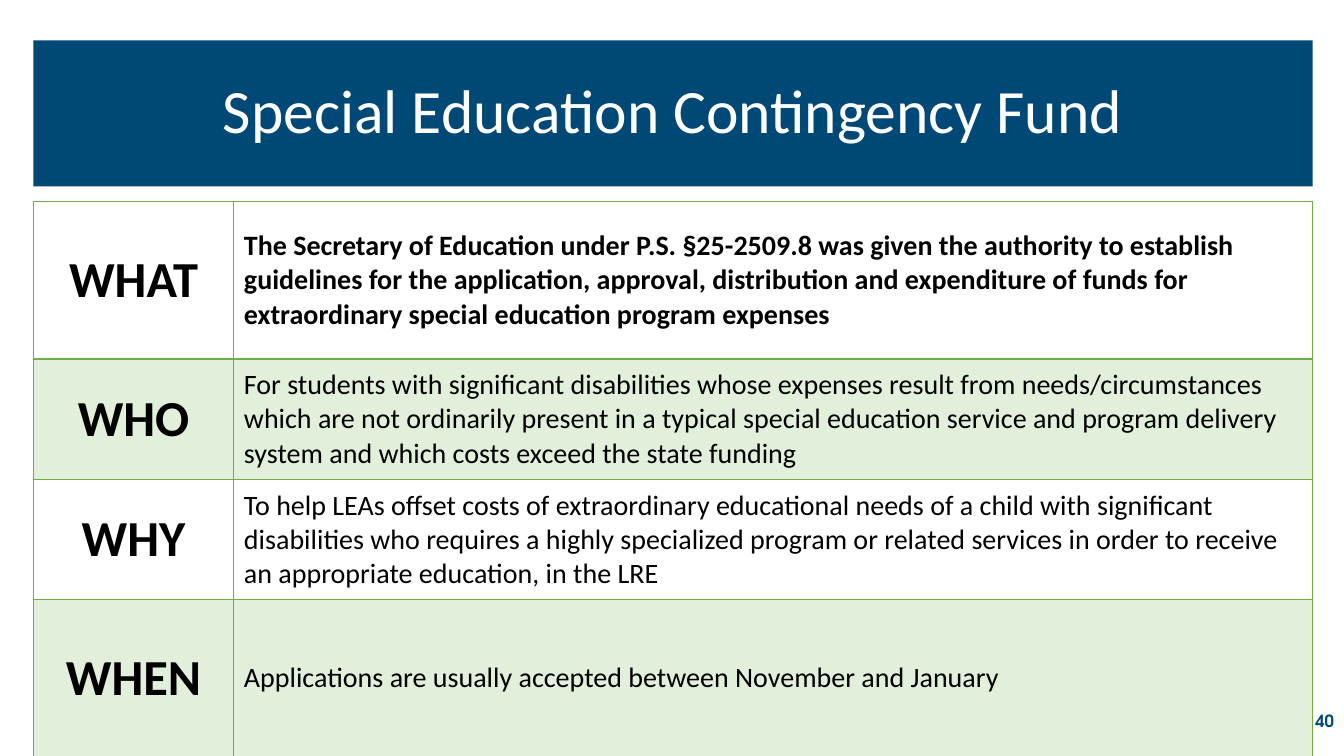
import pptx
import pptx.util
import pptx.dml.color
import pptx.enum.shapes
import pptx.enum.text
from lxml import etree

Inches, Pt = pptx.util.Inches, pptx.util.Pt
ALIGN = pptx.enum.text.PP_ALIGN
MIDDLE = pptx.enum.text.MSO_ANCHOR.MIDDLE

NAVY, GREEN, PALE_GREEN = "004976", "70AD47", "E2EFDA"
WHITE, BLACK = "FFFFFF", "000000"

TITLE = "Special Education Contingency Fund"
PAGE = "40"
# label, explanation, row height
ROWS = [
    ("WHAT", "The Secretary of Education under P.S. §25-2509.8 was given the authority to "
     "establish guidelines for the application, approval, distribution and expenditure of "
     "funds for extraordinary special education program expenses", 1.56),
    ("WHO", "For students with significant disabilities whose expenses result from "
     "needs/circumstances which are not ordinarily present in a typical special education "
     "service and program delivery system and which costs exceed the state funding", 1.2),
    ("WHY", "To help LEAs offset costs of extraordinary educational needs of a child with "
     "significant disabilities who requires a highly specialized program or related services "
     "in order to receive an appropriate education, in the LRE", 1.19),
    ("WHEN", "Applications are usually accepted between November and January", 1.56),
]
COLUMNS = (1.99, 10.7)
LEFT, WIDTH = 0.33, sum(COLUMNS)


def rgb(color):
    return pptx.dml.color.RGBColor.from_string(color)


def write(tf, text, size, color, align, bold=False, font="Calibri"):
    tf.word_wrap = True
    tf.text = text
    p = tf.paragraphs[0]
    p.alignment = align
    f = p.runs[0].font
    f.name, f.size, f.bold = font, Pt(size), bold
    f.color.rgb = rgb(color)
    return p


def add_borders(cell, bottom, top):
    """Draw the four cell edges; bottom and top are widths in points."""
    ns = "{http://schemas.openxmlformats.org/drawingml/2006/main}"
    tcPr = cell._tc.get_or_add_tcPr()
    for side, width in (("L", 1), ("R", 1), ("T", top), ("B", bottom)):
        ln = etree.SubElement(tcPr, f"{ns}ln{side}", w=str(Pt(width)))
        fill = etree.SubElement(ln, f"{ns}solidFill")
        etree.SubElement(fill, f"{ns}srgbClr", val=GREEN)


prs = pptx.Presentation()
prs.slide_width, prs.slide_height = Inches(13.33), Inches(7.5)
s = prs.slides.add_slide(prs.slide_layouts[6])

banner = s.shapes.add_shape(pptx.enum.shapes.MSO_SHAPE.RECTANGLE,
                            Inches(LEFT), Inches(0.4), Inches(WIDTH), Inches(1.45))
banner.shadow.inherit = False
banner.fill.solid()
banner.fill.fore_color.rgb = rgb(NAVY)
banner.line.fill.background()
banner.text_frame.vertical_anchor = MIDDLE
write(banner.text_frame, TITLE, 44, WHITE, ALIGN.CENTER).line_spacing = 0.9

table = s.shapes.add_table(len(ROWS), len(COLUMNS), Inches(LEFT), Inches(2), Inches(WIDTH),
                           Inches(sum(row[2] for row in ROWS))).table
table.first_row = table.horz_banding = False
for column, width in zip(table.columns, COLUMNS):
    column.width = Inches(width)
for i, (label, explanation, height) in enumerate(ROWS):
    table.rows[i].height = Inches(height)
    label_cell, text_cell = table.rows[i].cells
    write(label_cell.text_frame, label, 36, BLACK, ALIGN.CENTER, bold=True)
    write(text_cell.text_frame, explanation, 20, BLACK, ALIGN.LEFT, bold=i == 0)
    for cell in (label_cell, text_cell):
        cell.vertical_anchor = MIDDLE
        add_borders(cell, bottom=2 if i == 0 else 1, top=2 if i == 1 else 1)
        if i % 2:
            cell.fill.solid()
            cell.fill.fore_color.rgb = rgb(PALE_GREEN)
        else:
            cell.fill.background()

page = s.shapes.add_textbox(Inches(10.33), Inches(6.95), Inches(3), Inches(0.4))
page.text_frame.vertical_anchor = MIDDLE
write(page.text_frame, PAGE, 12, NAVY, ALIGN.RIGHT, bold=True, font="TeX Gyre Adventor")

prs.save("out.pptx")
